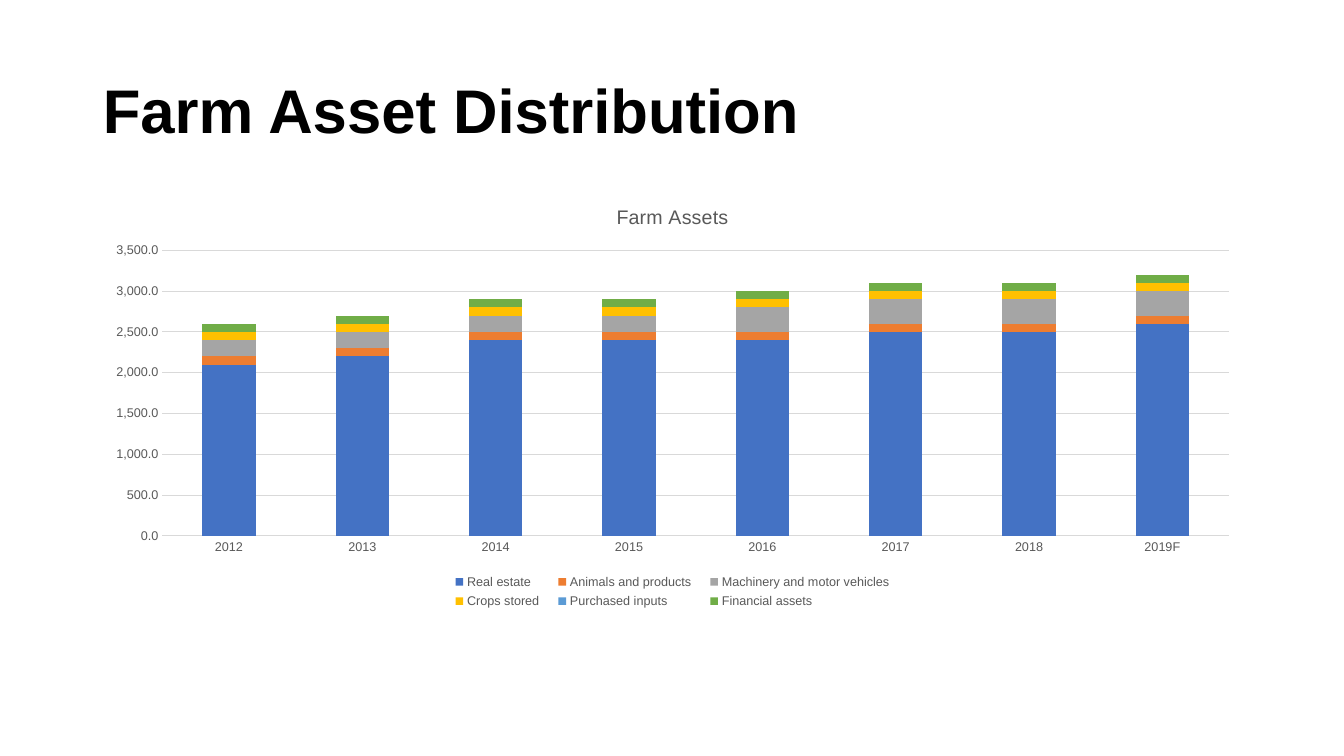
"""Build a slide with a stacked column chart of farm assets by year."""
from lxml import etree
from pptx import Presentation, util as u
from pptx.chart.data import CategoryChartData
from pptx.dml.color import RGBColor
from pptx.enum import chart as ch, text
from pptx.oxml import ns

INK, GREY, RULE = "000000", "595959", "D9D9D9"


def style(font, size, color, bold=False):
    font.name, font.size, font.bold = "Arial", u.Pt(size), bold
    font.color.rgb = RGBColor.from_string(color)


def rule(line):
    line.width = u.Pt(0.75)
    line.color.rgb = RGBColor.from_string(RULE)


prs = Presentation()
prs.slide_width, prs.slide_height = u.Inches(13.33), u.Inches(7.5)
s = prs.slides.add_slide(prs.slide_layouts[5])
left, width = u.Inches(0.92), u.Inches(11.5)

title = s.shapes.title
title.left, title.top, title.width, title.height = left, u.Inches(0.4), width, u.Inches(1.45)
tf = title.text_frame
tf.text = "Farm Asset Distribution"
tf.word_wrap = True
tf.auto_size = text.MSO_AUTO_SIZE.NONE
tf.vertical_anchor = text.MSO_ANCHOR.MIDDLE
p = tf.paragraphs[0]
p.alignment = text.PP_ALIGN.LEFT
p.line_spacing = 0.9
style(p.font, 44, INK, True)

assets = [
    ("Real estate", "4472C4", [2100, 2200, 2400, 2400, 2400, 2500, 2500, 2600]),
    ("Animals and products", "ED7D31", [100] * 8),
    ("Machinery and motor vehicles", "A5A5A5", [200] * 4 + [300] * 4),
    ("Crops stored", "FFC000", [100] * 8),
    ("Purchased inputs", "5B9BD5", [0] * 8),
    ("Financial assets", "70AD47", [100] * 8),
]
data = CategoryChartData(number_format="#,##0.0")
data.categories = [str(year) for year in range(2012, 2019)] + ["2019F"]
for name, color, values in assets:
    data.add_series(name, values)

chart = s.shapes.add_chart(ch.XL_CHART_TYPE.COLUMN_STACKED, left, u.Inches(1.85),
                           width, u.Inches(4.23), data).chart
style(chart.font, 10, INK)
chart.has_title = True
chart.chart_title.include_in_layout = False
tf = chart.chart_title.text_frame
tf.text = "Farm Assets"
style(tf.paragraphs[0].font, 14, GREY)

plot = chart.plots[0]
plot.gap_width, plot.overlap, plot.vary_by_categories = 150, 100, False
for series, (name, color, values) in zip(plot.series, assets):
    series.format.fill.solid()
    series.format.fill.fore_color.rgb = RGBColor.from_string(color)
    series.invert_if_negative = False

for axis in (chart.category_axis, chart.value_axis):
    axis.major_tick_mark = axis.minor_tick_mark = ch.XL_TICK_MARK.NONE
    style(axis.tick_labels.font, 9, GREY)
rule(chart.category_axis.format.line)
axis = chart.value_axis
axis.minimum_scale, axis.maximum_scale, axis.major_unit = 0, 3500, 500
axis.tick_labels.number_format = "#,##0.0"
axis.tick_labels.number_format_is_linked = False
axis.format.line.fill.background()
axis.has_major_gridlines = True
rule(axis.major_gridlines.format.line)

chart.has_legend = True
chart.legend.position = ch.XL_LEGEND_POSITION.BOTTOM
chart.legend.include_in_layout = False
style(chart.legend.font, 9, GREY)

frames = [("plotArea", (0.06, 0.15, 0.92, 0.67)), ("legend", (0.3, 0.9, 0.4, 0.1))]
for part, shares in frames:
    node = chart.element.find(".//" + ns.qn("c:" + part))
    for old in node.findall(ns.qn("c:layout")):
        node.remove(old)
    layout = etree.Element(ns.qn("c:layout"))
    manual = etree.SubElement(layout, ns.qn("c:manualLayout"))
    settings = [("xMode", "edge"), ("yMode", "edge"), *zip("xywh", shares)]
    if part == "plotArea":
        settings.insert(0, ("layoutTarget", "inner"))
    for key, value in settings:
        etree.SubElement(manual, ns.qn("c:" + key)).set("val", str(value))
    node.insert(0 if part == "plotArea" else 1, layout)

prs.save("out.pptx")
